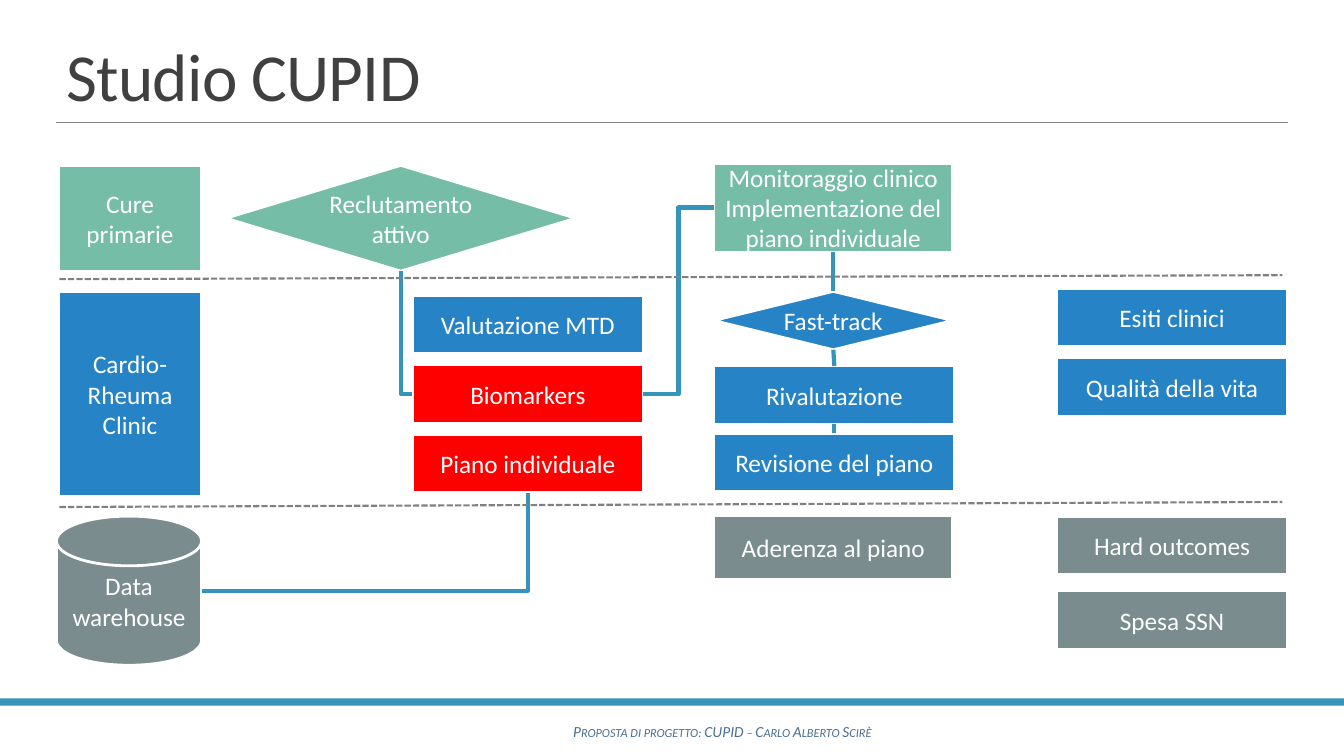
from lxml import etree
from pptx import Presentation, util as u
from pptx.dml.color import RGBColor
from pptx.enum import dml, shapes, text
from pptx.oxml.ns import qn

WHITE = RGBColor(0xFF, 0xFF, 0xFF)
GREEN = RGBColor(0x75, 0xBD, 0xA7)
BLUE = RGBColor(0x26, 0x83, 0xC6)
RED = RGBColor(0xFF, 0x00, 0x00)
SLATE = RGBColor(0x7A, 0x8C, 0x8E)
TEAL = RGBColor(0x34, 0x94, 0xBA)
GRAY = RGBColor(0x80, 0x80, 0x80)
DARK = RGBColor(0x40, 0x40, 0x40)
STEEL = RGBColor(0x4A, 0x70, 0x90)

WIDE, HIGH = 13.33, 7.5
EDGE, SPAN = 0.56, 12.21
KIND = shapes.MSO_SHAPE
RECT, GEM, DISK = (KIND.RECTANGLE, KIND.FLOWCHART_DECISION,
                   KIND.FLOWCHART_MAGNETIC_DISK)
TOP, LEFT, BOTTOM, RIGHT = range(4)

# Columns: left, width
COLS = {"lane": (0.58, 1.42), "store": (EDGE, 1.44), "entry": (2.24, 3.47),
        "visit": (4.09, 2.29), "follow": (7.08, 2.37),
        "review": (7.08, 2.39), "result": (10.48, 2.29)}
ROW = 0.58   # height of a standard box
STEP = 0.69  # distance between stacked boxes

# Text, column, top, height, colour, shape
BOXES = [
    ("Cure primarie", "lane", 1.64, 1.05, GREEN, RECT),
    ("Cardio-Rheuma Clinic", "lane", 2.89, 2.04, BLUE, RECT),
    ("Data warehouse", "store", 5.12, 1.48, SLATE, DISK),
    ("Reclutamento attivo", "entry", 1.64, 1.05, GREEN, GEM),
    ("Monitoraggio clinico\nImplementazione del piano individuale",
     "follow", 1.62, 0.88, GREEN, RECT),
    ("Fast-track", "follow", 2.89, ROW, BLUE, GEM),
    ("Aderenza al piano", "follow", 5.12, 0.63, SLATE, RECT),
]
# Column, first top, step, (text, colour) downwards
STACKS = [
    ("visit", 2.93, STEP, [("Valutazione MTD", BLUE), ("Biomarkers", RED),
                           ("Piano individuale", RED)]),
    ("review", 3.63, 0.67, [("Rivalutazione", BLUE),
                            ("Revisione del piano", BLUE)]),
    ("result", 2.86, STEP, [("Esiti clinici", BLUE),
                            ("Qualità della vita", BLUE)]),
    ("result", 5.12, 0.74, [("Hard outcomes", SLATE), ("Spesa SSN", SLATE)]),
]
# From box, side, to box, side, connector preset
LINKS = [
    ("Biomarkers", LEFT, "Reclutamento attivo", BOTTOM, "bentConnector2"),
    ("Biomarkers", RIGHT, "Monitoraggio clinico", LEFT, "bentConnector3"),
    ("Monitoraggio clinico", BOTTOM, "Fast-track", TOP, "line"),
    ("Fast-track", BOTTOM, "Rivalutazione", TOP, "line"),
    ("Rivalutazione", BOTTOM, "Revisione del piano", TOP, "line"),
    ("Data warehouse", RIGHT, "Piano individuale", BOTTOM, "bentConnector2"),
]
LANES = [(2.77, 2.73), (5.03, 4.98)]  # left and right height of each divider

deck = Presentation()
deck.slide_width, deck.slide_height = u.Inches(WIDE), u.Inches(HIGH)
slide = deck.slides.add_slide(deck.slide_layouts[6])
nodes = {}


def write(shape, words, size=18, color=WHITE, align=text.PP_ALIGN.CENTER,
          anchor=text.MSO_ANCHOR.MIDDLE, italic=False, lead=None, **attrs):
    """Fill a shape with text; attrs go onto each run's properties."""
    frame = shape.text_frame
    frame.word_wrap, frame.vertical_anchor = True, anchor
    frame.text = words
    for para in frame.paragraphs:
        para.alignment = align
        if lead:
            para.line_spacing = lead
        for run in para.runs:
            font = run.font
            font.name, font.size, font.italic = "Calibri", u.Pt(size), italic
            font.color.rgb = color
            for key, val in attrs.items():
                run._r.get_or_add_rPr().set(key, val)


def block(kind, x, y, w, h, fill):
    shape = slide.shapes.add_shape(kind, *map(u.Inches, (x, y, w, h)))
    shape.shadow.inherit = False
    shape.fill.solid()
    shape.fill.fore_color.rgb = fill
    shape.line.fill.background()
    return shape


def box(words, col, top, high, fill, kind):
    x, w = COLS[col]
    shape = block(kind, x, top, w, high, fill)
    shape.line.color.rgb, shape.line.width = WHITE, u.Pt(2)
    spot = text.MSO_ANCHOR.TOP if kind == DISK else text.MSO_ANCHOR.MIDDLE
    write(shape, words, anchor=spot)
    nodes[words.split("\n")[0]] = shape


def wire(start, end, color, width, preset="line"):
    bent = preset != "line"
    kind = shapes.MSO_CONNECTOR.ELBOW if bent else shapes.MSO_CONNECTOR.STRAIGHT
    line = slide.shapes.add_connector(kind, *start, *end)
    line.line.color.rgb, line.line.width = color, u.Pt(width)
    props = line._element.spPr
    props.find(qn("a:prstGeom")).set("prst", preset)
    etree.SubElement(props, qn("a:effectLst"))
    return line


def port(shape, side):
    """Middle of one side of a shape."""
    dx, dy = [(1, 0), (0, 1), (1, 2), (2, 1)][side]
    return (shape.left + shape.width * dx // 2,
            shape.top + shape.height * dy // 2)


def spot(x, y):
    return u.Inches(x), u.Inches(y)


def label(x, y, w, h, words, **form):
    area = slide.shapes.add_textbox(*spot(x, y), *spot(w, h))
    write(area, words, **form)


block(RECT, 0, 6.93, WIDE, 0.07, TEAL)
wire(spot(EDGE, 1.21), spot(EDGE + SPAN, 1.21), GRAY, 0.5)
label(2.58, 7.11, 9.17, 0.29,
      "Proposta di progetto: CUPID – Carlo Alberto Scirè",
      size=11, color=STEEL, italic=True, anchor=text.MSO_ANCHOR.TOP, cap="small")
label(EDGE, 0.31, SPAN, 0.88, "Studio CUPID", size=48, color=DARK, lead=0.85,
      align=text.PP_ALIGN.LEFT, anchor=text.MSO_ANCHOR.BOTTOM, spc="-50")

for item in BOXES:
    box(*item)
for col, top, step, items in STACKS:
    for i, (words, fill) in enumerate(items):
        box(words, col, top + i * step, ROW, fill, RECT)

for first, out, last, into, preset in LINKS:
    a, b = nodes[first], nodes[last]
    line = wire(port(a, out), port(b, into), TEAL, 3, preset)
    if a.auto_shape_type != DISK:  # a disk numbers its sides differently
        line.begin_connect(a, out)
    line.end_connect(b, into)

for near, far in LANES:
    line = wire(spot(0.59, near), spot(12.72, far), GRAY, 1.5)
    line.line.dash_style = dml.MSO_LINE.SQUARE_DOT

deck.save("out.pptx")
